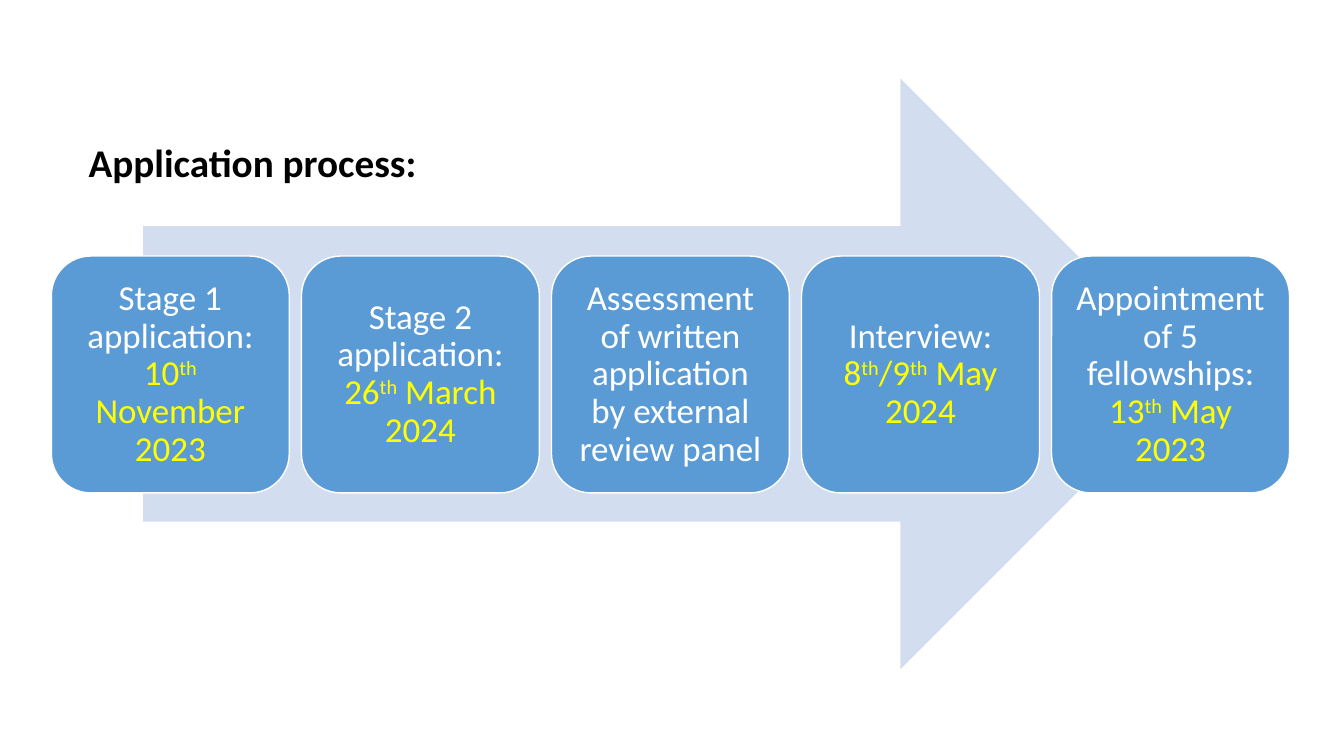
"""Build the application process slide: five stages along an arrow."""
from dataclasses import dataclass

from lxml import etree
from pptx import Presentation
from pptx.dml.color import RGBColor
from pptx.enum.shapes import MSO_SHAPE
from pptx.enum.text import MSO_ANCHOR, PP_ALIGN
from pptx.oxml.ns import qn
from pptx.util import Inches, Pt

RIGHT_ARROW = MSO_SHAPE.RIGHT_ARROW
ROUNDED_RECTANGLE = MSO_SHAPE.ROUNDED_RECTANGLE
MIDDLE = MSO_ANCHOR.MIDDLE
CENTER = PP_ALIGN.CENTER


@dataclass(frozen=True)
class Theme:
    font: str = "Calibri"
    heading_size: int = 28
    stage_size: int = 25
    black: RGBColor = RGBColor(0x00, 0x00, 0x00)
    white: RGBColor = RGBColor(0xFF, 0xFF, 0xFF)
    yellow: RGBColor = RGBColor(0xFF, 0xFF, 0x00)
    blue: RGBColor = RGBColor(0x5B, 0x9B, 0xD5)
    pale_blue: RGBColor = RGBColor(0xD2, 0xDE, 0xEF)


THEME = Theme()


def add_text(paragraph, text, *, size, color, bold=False, superscript=False):
    run = paragraph.add_run()
    run.text = text
    run.font.name = THEME.font
    run.font.size = Pt(size)
    run.font.bold = bold
    run.font.color.rgb = color
    if superscript:
        run._r.get_or_add_rPr().set("baseline", "30000")


def add_filled_shape(slide, kind, left, top, width, height, color):
    shape = slide.shapes.add_shape(
        kind, Inches(left), Inches(top), Inches(width), Inches(height))
    shape.shadow.inherit = False
    shape.fill.solid()
    shape.fill.fore_color.rgb = color
    shape.line.fill.background()
    return shape


presentation = Presentation()
presentation.slide_width = Inches(13.33)
presentation.slide_height = Inches(7.5)
slide = presentation.slides.add_slide(presentation.slide_layouts[1])
title = slide.shapes.title
title.element.getparent().remove(title.element)

body = slide.placeholders[1]
body.left, body.top = Inches(0.78), Inches(1.37)
body.width, body.height = Inches(11.5), Inches(4.76)
heading = body.text_frame.paragraphs[0]
properties = heading._p.get_or_add_pPr()
properties.set("marL", "0")
properties.set("indent", "0")
etree.SubElement(properties, qn("a:buNone"))
heading.line_spacing = 0.9
heading.space_before = Pt(0)
add_text(heading, "Application process:",
         size=THEME.heading_size, color=THEME.black, bold=True)

add_filled_shape(slide, RIGHT_ARROW, 1.42, 0.78, 10.44, 5.86, THEME.pale_blue)

STAGES = [
    ("Stage 1 application: ", "10^th^ November 2023"),
    ("Stage 2 application: ", "26^th^ March 2024"),
    ("Assessment of written application by external review panel", ""),
    ("Interview: ", "8^th^/9^th^ May 2024"),
    ("Appointment of 5 fellowships: ", "13^th^ May 2023"),
]
FIRST_LEFT, STAGE_PITCH = 0.51, 2.48

for index, (label, date) in enumerate(STAGES):
    stage = add_filled_shape(slide, ROUNDED_RECTANGLE,
                             FIRST_LEFT + index * STAGE_PITCH, 2.54, 2.36, 2.35,
                             THEME.blue)
    stage.line.color.rgb = THEME.white
    stage.line.width = Pt(1)
    frame = stage.text_frame
    frame.word_wrap = True
    frame.vertical_anchor = MIDDLE
    frame.margin_left = frame.margin_right = Inches(0.1)
    frame.margin_top = frame.margin_bottom = Inches(0.1)
    paragraph = frame.paragraphs[0]
    paragraph.alignment = CENTER
    paragraph.line_spacing = 0.9
    add_text(paragraph, label, size=THEME.stage_size, color=THEME.white)
    if date:
        for position, part in enumerate(date.split("^")):
            add_text(paragraph, part, size=THEME.stage_size,
                     color=THEME.yellow, superscript=position % 2 == 1)

presentation.save("out.pptx")
